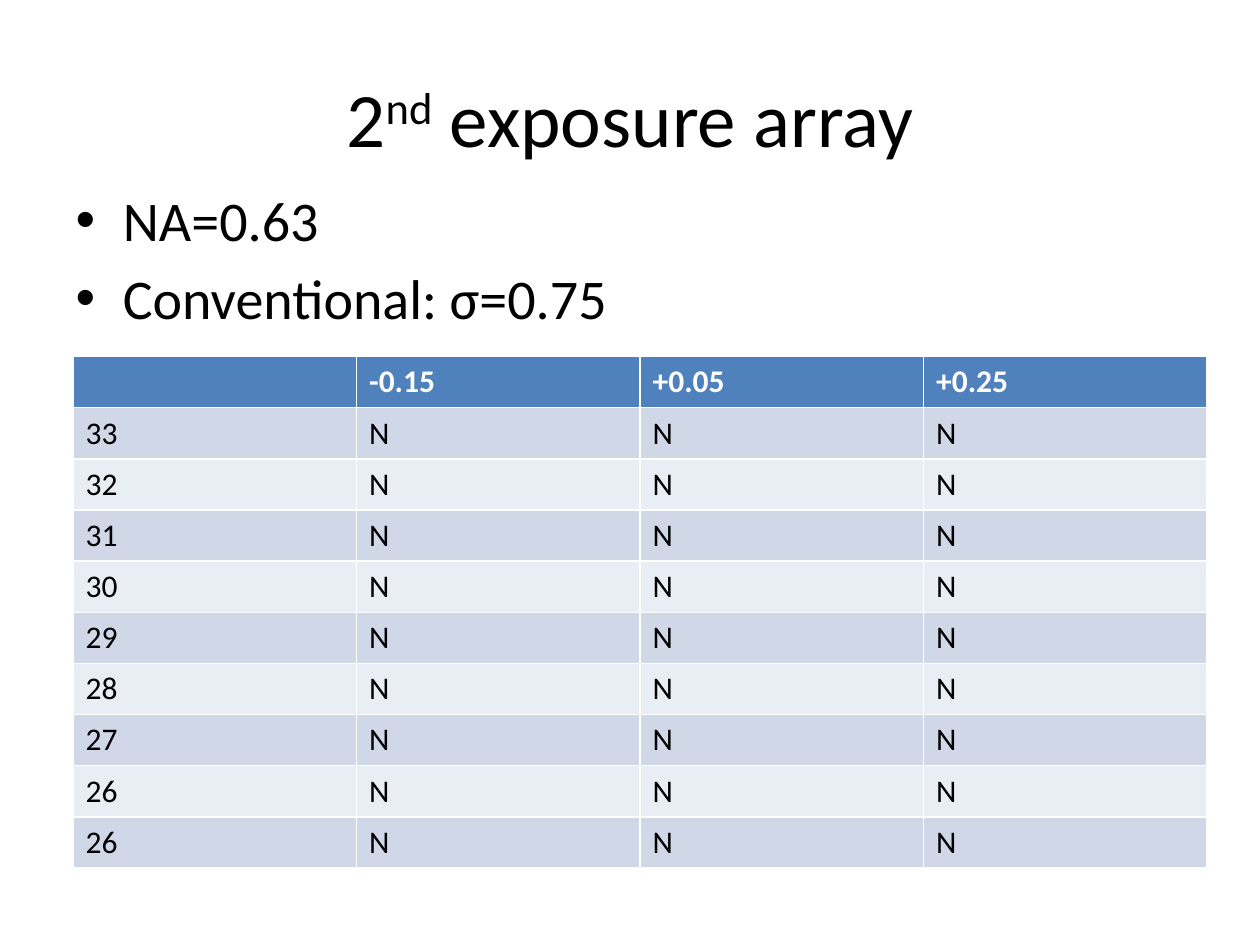
import pptx
import pptx.dml.color
import pptx.enum.text
import pptx.util

Inches = pptx.util.Inches
Pt = pptx.util.Pt
Color = pptx.dml.color.RGBColor.from_string


class Theme:
    font = "Calibri"
    text = Color("000000")
    header_text = Color("FFFFFF")
    header_fill = Color("4F81BD")
    band_fills = (Color("D0D8E8"), Color("E9EDF4"))
    title_size = Pt(44)
    body_size = Pt(32)
    table_size = Pt(18)
    superscript = "30000"


class SlideBuilder:
    def __init__(self, slide, theme):
        self.slide = slide
        self.theme = theme

    def apply(self, target, values):
        for name, value in values.items():
            setattr(target, name, value)

    def place(self, shape, left, top, width, height):
        self.apply(shape, {
            "left": Inches(left), "top": Inches(top),
            "width": Inches(width), "height": Inches(height),
        })

    def add_run(self, paragraph, text, size, color, bold=False):
        run = paragraph.add_run()
        run.text = text
        self.apply(run.font, {"name": self.theme.font, "size": size, "bold": bold})
        run.font.color.rgb = color
        return run

    def title(self, parts, bounds):
        shape = self.slide.shapes.title
        self.place(shape, *bounds)
        self.apply(shape.text_frame, {
            "vertical_anchor": pptx.enum.text.MSO_ANCHOR.MIDDLE,
            "auto_size": pptx.enum.text.MSO_AUTO_SIZE.NONE,
        })
        paragraph = shape.text_frame.paragraphs[0]
        paragraph.alignment = pptx.enum.text.PP_ALIGN.CENTER
        for text, raised in parts:
            run = self.add_run(paragraph, text, self.theme.title_size, self.theme.text)
            if raised:
                run.font._element.set("baseline", self.theme.superscript)

    def bullets(self, items, bounds):
        shape = self.slide.placeholders[1]
        self.place(shape, *bounds)
        frame = shape.text_frame
        frame.auto_size = pptx.enum.text.MSO_AUTO_SIZE.NONE
        for index, item in enumerate(items):
            paragraph = frame.add_paragraph() if index else frame.paragraphs[0]
            self.add_run(paragraph, item, self.theme.body_size, self.theme.text)

    def table(self, rows, bounds):
        lengths = [Inches(value) for value in bounds]
        table = self.slide.shapes.add_table(len(rows), len(rows[0]), *lengths).table
        for row_index, row in enumerate(rows):
            is_header = row_index == 0
            fill = self.theme.header_fill if is_header else self.theme.band_fills[(row_index - 1) % 2]
            color = self.theme.header_text if is_header else self.theme.text
            for column_index, text in enumerate(row):
                cell = table.cell(row_index, column_index)
                cell.fill.solid()
                cell.fill.fore_color.rgb = fill
                paragraph = cell.text_frame.paragraphs[0]
                paragraph.font.size = self.theme.table_size
                if text:
                    self.add_run(paragraph, text, self.theme.table_size, color, is_header)


def main():
    presentation = pptx.Presentation()
    presentation.slide_width = Inches(10)
    presentation.slide_height = Inches(7.5)
    slide = presentation.slides.add_slide(presentation.slide_layouts[1])
    builder = SlideBuilder(slide, Theme())

    builder.title([("2", False), ("nd", True), (" exposure array", False)], (0.5, 0.3, 9, 1.25))
    builder.bullets(["NA=0.63", "Conventional: σ=0.75"], (0.5, 1.42, 9, 1.42))

    offsets = ["-0.15", "+0.05", "+0.25"]
    doses = [33, 32, 31, 30, 29, 28, 27, 26, 26]
    rows = [["", *offsets]] + [[str(dose)] + ["N"] * len(offsets) for dose in doses]
    builder.table(rows, (0.58, 2.83, 9, 4.06))

    presentation.save("out.pptx")


if __name__ == "__main__":
    main()
